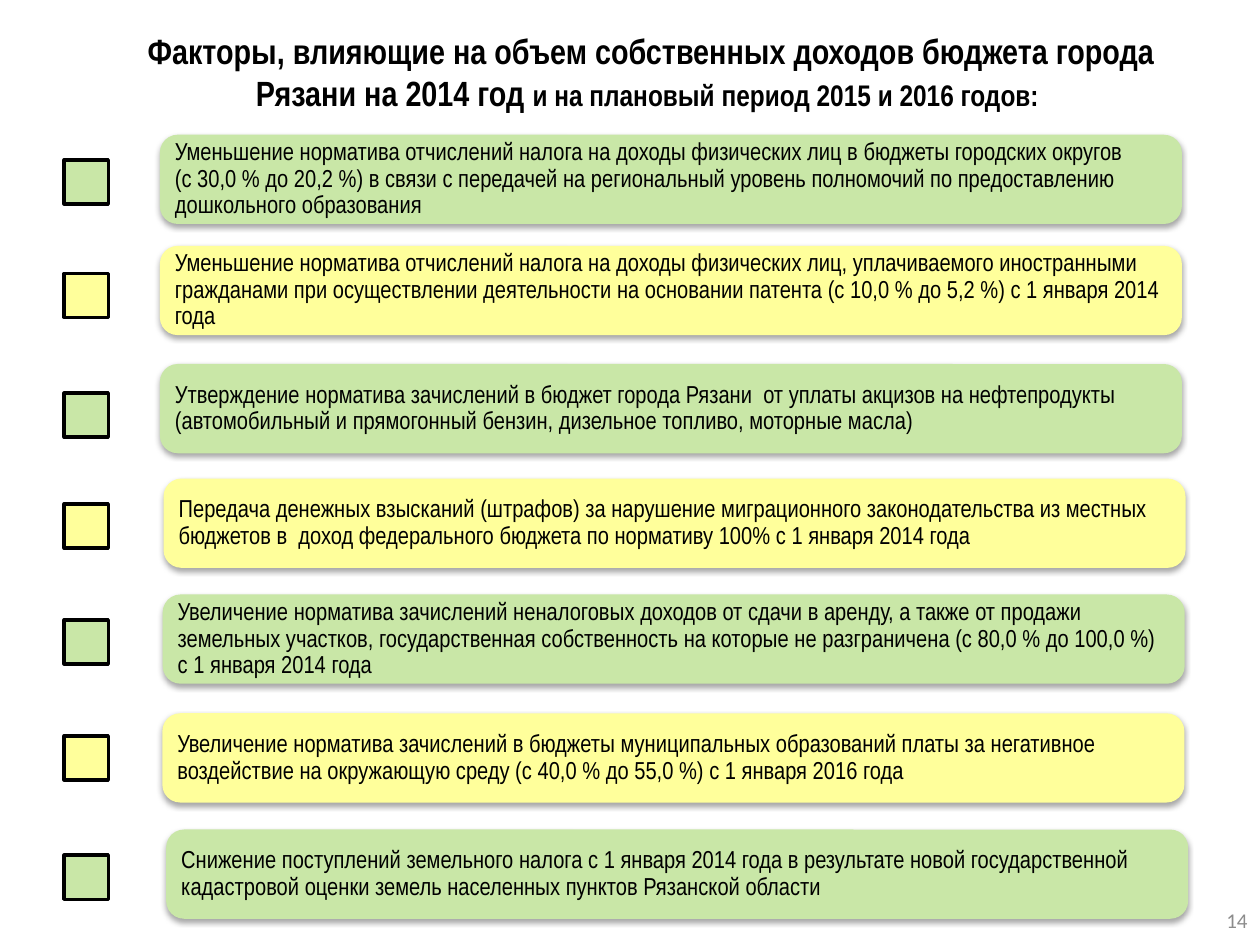
from lxml import etree
from pptx import Presentation
from pptx.dml.color import RGBColor
from pptx.enum.shapes import MSO_SHAPE
from pptx.enum.text import MSO_ANCHOR, PP_ALIGN
from pptx.oxml.ns import qn
from pptx.util import Pt

RECTANGLE = MSO_SHAPE.RECTANGLE
ROUNDED = MSO_SHAPE.ROUNDED_RECTANGLE
MIDDLE = MSO_ANCHOR.MIDDLE
LEFT, CENTER, RIGHT = PP_ALIGN.LEFT, PP_ALIGN.CENTER, PP_ALIGN.RIGHT

COLORS = {"green": "C9E7A7", "yellow": "FFFF9B", "black": "000000", "gray": "8C8C8C"}

# Each factor: card left, card top, marker top, lines of text
FACTORS = [
    (91.4, 77, 91.4, [
        "Уменьшение норматива отчислений налога на доходы физических лиц в бюджеты городских округов",
        "(с 30,0 % до 20,2 %) в связи с передачей на региональный уровень полномочий "
        "по предоставлению дошкольного образования"]),
    (91.4, 140.5, 156.2, [
        "Уменьшение норматива отчислений налога на доходы физических лиц, уплачиваемого "
        "иностранными гражданами при осуществлении деятельности на основании патента "
        "(с 10,0 % до 5,2 %) с 1 января 2014 года"]),
    (91.4, 208, 224.6, [
        "Утверждение норматива зачислений в бюджет города Рязани  от уплаты акцизов на "
        "нефтепродукты (автомобильный и прямогонный бензин, дизельное топливо, моторные масла)"]),
    (93.5, 273.5, 288, [
        "Передача денежных взысканий (штрафов) за нарушение миграционного законодательства "
        "из местных бюджетов в  доход федерального бюджета по нормативу 100% с 1 января 2014 года"]),
    (93, 339.7, 354.2, [
        "Увеличение норматива зачислений неналоговых доходов от сдачи в аренду, а также от "
        "продажи земельных участков, государственная собственность на которые не разграничена "
        "(с 80,0 % до 100,0 %) с 1 января 2014 года"]),
    (92.8, 407.6, 420.5, [
        "Увеличение норматива зачислений в бюджеты муниципальных образований платы за "
        "негативное воздействие на окружающую среду (с 40,0 % до 55,0 %) с 1 января 2016 года"]),
    (95, 474, 488.7, [
        "Снижение поступлений земельного налога с 1 января 2014 года в результате новой "
        "государственной кадастровой оценки земель населенных пунктов Рязанской области"]),
]


class SlideBuilder:
    font = "Arial Narrow"
    card_size = (584, 51)
    marker_left, marker_size = 36.7, 25.2

    def __init__(self, page):
        self.page = page

    def color(self, name):
        return RGBColor.from_string(COLORS[name])

    def span(self, para, text, size, color="black", bold=False, font=None):
        span = para.add_run()
        span.text = text
        span.font.name = font or self.font
        span.font.size = Pt(size)
        span.font.bold = bold
        span.font.color.rgb = self.color(color)

    def shape(self, kind, left, top, width, height, fill):
        shape = self.page.shapes.add_shape(kind, Pt(left), Pt(top), Pt(width), Pt(height))
        shape.shadow.inherit = False
        shape.fill.solid()
        shape.fill.fore_color.rgb = self.color(fill)
        return shape

    def marker(self, top, fill):
        box = self.shape(RECTANGLE, self.marker_left, top, self.marker_size, self.marker_size, fill)
        box.line.color.rgb = self.color("black")
        box.line.width = Pt(2)

    def soft_shadow(self, shape):
        effects = shape._element.spPr.find(qn("a:effectLst"))
        shadow = etree.SubElement(effects, qn("a:outerShdw"), blurRad=str(Pt(3.1)),
                                  dist=str(Pt(1.8)), dir="5400000", rotWithShape="0")
        tint = etree.SubElement(shadow, qn("a:srgbClr"), val=COLORS["black"])
        etree.SubElement(tint, qn("a:alpha"), val="35000")

    def card(self, left, top, fill, lines):
        box = self.shape(ROUNDED, left, top, *self.card_size, fill)
        box.adjustments[0] = 0.2
        box.line.fill.background()
        self.soft_shadow(box)
        frame = box.text_frame
        frame.word_wrap = True
        frame.vertical_anchor = MIDDLE
        frame.margin_left = frame.margin_right = Pt(5.6)
        frame.margin_top = frame.margin_bottom = 0
        para = frame.paragraphs[0]
        para.alignment = LEFT
        para.line_spacing = 0.9
        for index, line in enumerate(lines):
            if index:
                para.add_line_break()
            self.span(para, line, 14)

    def text(self, left, top, width, height, align):
        box = self.page.shapes.add_textbox(Pt(left), Pt(top), Pt(width), Pt(height))
        box.text_frame.word_wrap = True
        box.text_frame.vertical_anchor = MIDDLE
        para = box.text_frame.paragraphs[0]
        para.alignment = align
        return para


def main():
    deck = Presentation()
    deck.slide_width, deck.slide_height = Pt(720), Pt(540)
    builder = SlideBuilder(deck.slides.add_slide(deck.slide_layouts[6]))

    # Title
    title = builder.text(48, 18, 648, 45.4, CENTER)
    builder.span(title, "Факторы, влияющие на объем собственных доходов бюджета города "
                        "Рязани на 2014 год ", 20, bold=True)
    builder.span(title, "и на плановый период 2015 и 2016 годов: ", 17, bold=True)

    # Factors with alternating colours
    for index, (left, top, marker_top, lines) in enumerate(FACTORS):
        fill = ("green", "yellow")[index % 2]
        builder.marker(marker_top, fill)
        builder.card(left, top, fill, lines)

    # Page number
    number = builder.text(552, 511, 168, 29, RIGHT)
    builder.span(number, "14", 12, "gray", font="Calibri")

    deck.save("out.pptx")


if __name__ == "__main__":
    main()
